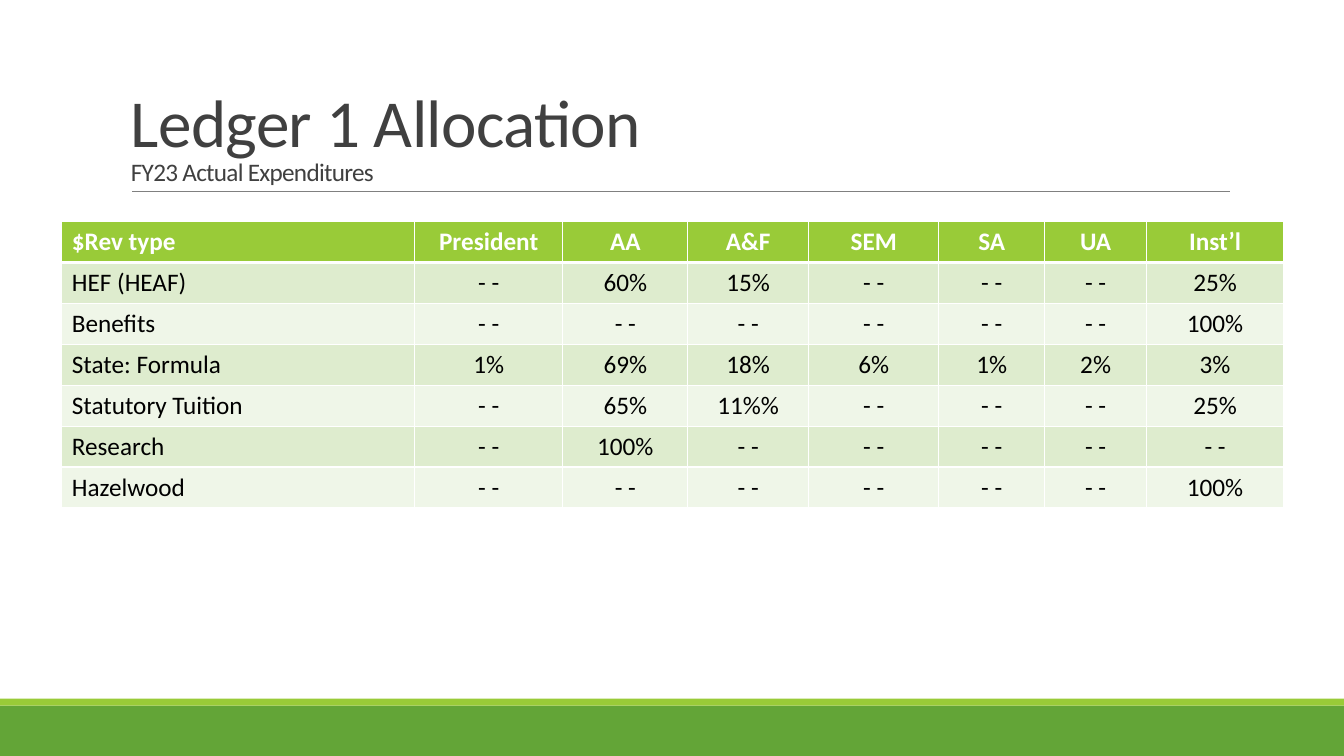
"""Build the Ledger 1 allocation slide with its table of expenditure shares."""
from pptx import Presentation
from pptx.dml.color import RGBColor
from pptx.enum.shapes import MSO_CONNECTOR as Connector, MSO_SHAPE as Shape
from pptx.enum.text import MSO_ANCHOR as Anchor, PP_ALIGN as Align
from pptx.oxml.ns import qn
from pptx.util import Inches, Pt
from lxml.etree import SubElement

SLIDE_WIDTH, SLIDE_HEIGHT = Inches(13.333), Inches(7.5)
FONT = "Calibri"
COLORS = {
    "green": "63A537", "lime": "99CB38", "rule": "808080", "title": "404040",
    "white": "FFFFFF", "black": "000000", "band": "DEECCE", "pale": "EFF6E8",
}
COLUMN_SHARES = [26.25, 11.03, 9.3, 9, 9.68, 7.88, 7.58, 10.2]
ROW_SHARE = 5.41
NONE = "- -"
DIVISIONS = ["$Rev type", "President", "AA", "A&F", "SEM", "SA", "UA", "Inst’l"]
ALLOCATIONS = [
    ["HEF (HEAF)", NONE, "60%", "15%", NONE, NONE, NONE, "25%"],
    ["Benefits", NONE, NONE, NONE, NONE, NONE, NONE, "100%"],
    ["State: Formula", "1%", "69%", "18%", "6%", "1%", "2%", "3%"],
    ["Statutory Tuition", NONE, "65%", "11%%", NONE, NONE, NONE, "25%"],
    ["Research", NONE, "100%", NONE, NONE, NONE, NONE, NONE],
    ["Hazelwood", NONE, NONE, NONE, NONE, NONE, NONE, "100%"],
]


def across(percent):
    """Return a percentage of the slide's width."""
    return round(SLIDE_WIDTH * percent / 100)


def down(percent):
    """Return a percentage of the slide's height."""
    return round(SLIDE_HEIGHT * percent / 100)


def color(name):
    """Return the named colour."""
    return RGBColor.from_string(COLORS[name])


def write(paragraph, text, size=18, ink="black", bold=False, spacing=None):
    """Add formatted text to a paragraph."""
    run = paragraph.add_run()
    run.text = text
    run.font.name, run.font.size, run.font.bold = FONT, Pt(size), bold
    run.font.color.rgb = color(ink)
    if spacing is not None:
        run.font._element.set("spc", str(round(spacing * 100)))


def add_band(slide, top, height, fill):
    """Draw a full-width footer band."""
    band = slide.shapes.add_shape(
        Shape.RECTANGLE, 0, down(top), SLIDE_WIDTH, down(height))
    band.shadow.inherit = False
    band.fill.solid()
    band.fill.fore_color.rgb = color(fill)
    band.line.fill.background()


def add_rule(slide, left, right, top):
    """Draw the thin rule below the title."""
    rule = slide.shapes.add_connector(
        Connector.STRAIGHT, across(left), down(top), across(right), down(top))
    rule.line.color.rgb = color("rule")
    rule.line.width = Pt(0.5)
    SubElement(rule._element.spPr, qn("a:effectLst"))


def add_title(slide, title, subtitle):
    """Place the title and its subtitle on the rule."""
    frame = slide.shapes.add_textbox(
        across(9), down(4.13), across(82.5), down(21.2)).text_frame
    frame.word_wrap = True
    frame.vertical_anchor = Anchor.BOTTOM
    heading = frame.paragraphs[0]
    heading.line_spacing = 0.85
    write(heading, title, size=48, ink="title", spacing=-0.5)
    heading.add_line_break()
    write(heading, subtitle, ink="title", spacing=-0.5)


def add_borders(cell, **widths):
    """Give a cell white borders of the widths listed by side."""
    properties = cell._tc.get_or_add_tcPr()
    for side, width in widths.items():
        border = SubElement(properties, qn(f"a:ln{side}"), w=str(Pt(width)))
        fill = SubElement(border, qn("a:solidFill"))
        SubElement(fill, qn("a:srgbClr"), val=COLORS["white"])


def fill_cell(cell, text, row, column):
    """Write and style one cell according to its place in the table."""
    header = row == 0
    add_borders(cell, L=1, R=1, T=3 if row == 1 else 1, B=3 if header else 1)
    cell.fill.solid()
    cell.fill.fore_color.rgb = color(
        "lime" if header else "band" if row % 2 else "pale")
    entry = cell.text_frame.paragraphs[0]
    entry.alignment = Align.CENTER if column else Align.LEFT
    write(entry, text, ink="white" if header else "black", bold=header)


def add_allocation_table(slide, left, top):
    """Lay out the allocations by revenue type and division."""
    entries = [DIVISIONS, *ALLOCATIONS]
    table = slide.shapes.add_table(
        len(entries), len(DIVISIONS), across(left), down(top),
        across(sum(COLUMN_SHARES)), down(ROW_SHARE * len(entries))).table
    for column, share in zip(table.columns, COLUMN_SHARES):
        column.width = across(share)
    for row, texts in enumerate(entries):
        table.rows[row].height = down(ROW_SHARE)
        for column, text in enumerate(texts):
            fill_cell(table.cell(row, column), text, row, column)


def main():
    """Assemble and save the slide."""
    deck = Presentation()
    deck.slide_width, deck.slide_height = SLIDE_WIDTH, SLIDE_HEIGHT
    slide = deck.slides.add_slide(deck.slide_layouts[6])
    add_band(slide, 93.33, 6.67, "green")
    add_band(slide, 92.4, 0.93, "lime")
    add_rule(slide, 9.83, 91.55, 25.33)
    add_title(slide, "Ledger 1 Allocation", "FY23 Actual Expenditures")
    add_allocation_table(slide, 4.6, 29.33)
    deck.save("out.pptx")


if __name__ == "__main__":
    main()
